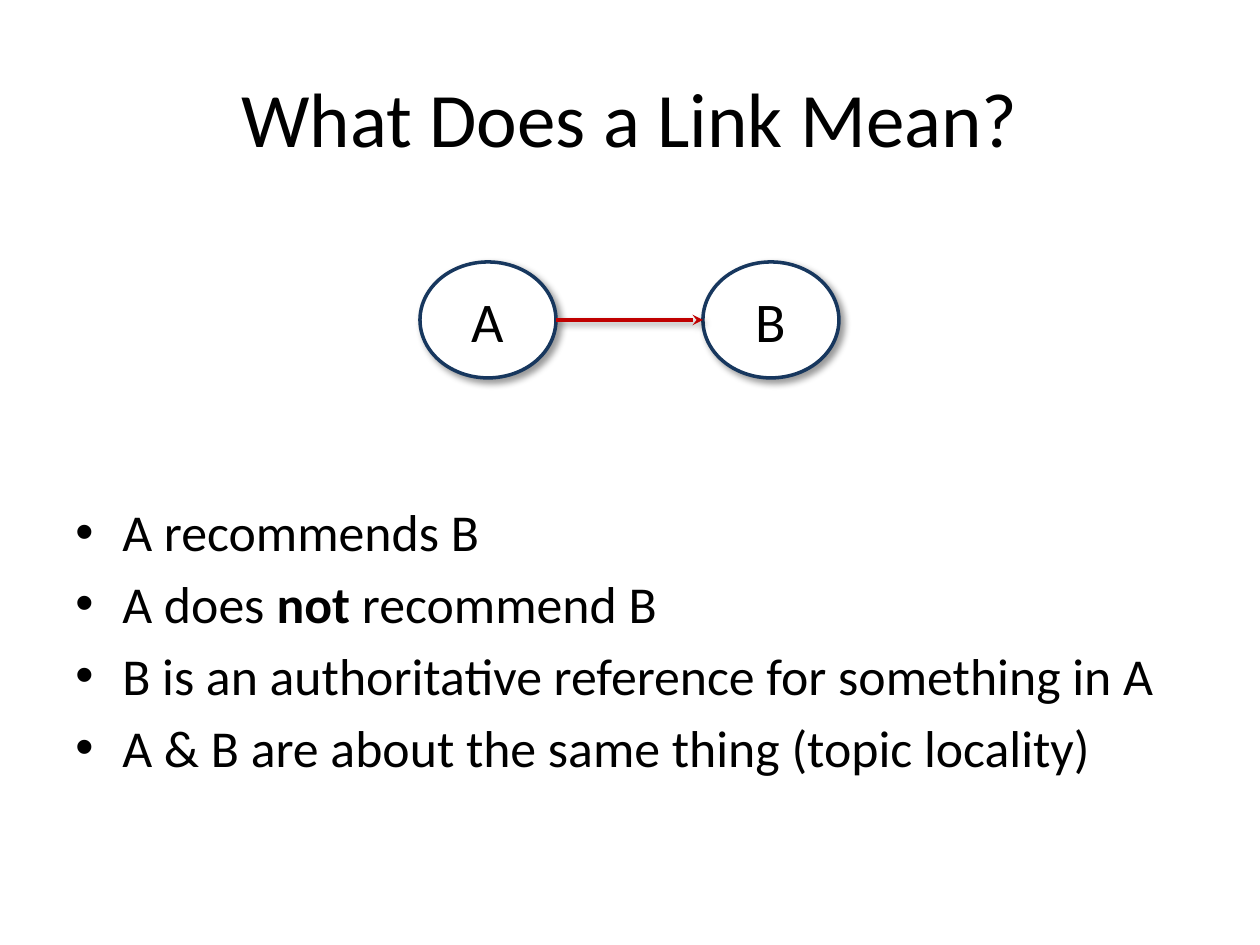
"""Build the slide on what a link from A to B means."""
import pptx
import pptx.dml.color
import pptx.enum.shapes
import pptx.enum.text
import pptx.oxml
import pptx.oxml.ns
import pptx.util

PX = 914400 // 126
BLACK = pptx.dml.color.RGBColor(0x00, 0x00, 0x00)
WHITE = pptx.dml.color.RGBColor(0xFF, 0xFF, 0xFF)
NAVY = pptx.dml.color.RGBColor(0x17, 0x37, 0x5E)
RED = pptx.dml.color.RGBColor(0xC0, 0x00, 0x00)
NS = pptx.oxml.ns.nsdecls("a")
SHADOW = (
    f'<a:effectLst {NS}><a:outerShdw blurRad="50800" dist="38100" dir="2700000" '
    'algn="tl" rotWithShape="0"><a:srgbClr val="000000"><a:alpha val="40000"/>'
    '</a:srgbClr></a:outerShdw></a:effectLst>'
)


def format_runs(p, size):
    for r in p.runs:
        r.font.name = "Calibri"
        r.font.size = pptx.util.Pt(size)
        r.font.color.rgb = BLACK


def outline_with_shadow(sp, color):
    sp.line.color.rgb = color
    sp.line.width = pptx.util.Pt(2)
    sp._element.spPr.append(pptx.oxml.parse_xml(SHADOW))


prs = pptx.Presentation()
prs.slide_width = pptx.util.Inches(10)
prs.slide_height = pptx.util.Inches(7.5)
s = prs.slides.add_slide(prs.slide_layouts[5])

title = s.shapes.title
title.left, title.top, title.width, title.height = 63 * PX, 38 * PX, 1134 * PX, 157 * PX
title.text_frame.text = "What Does a Link Mean?"
title.text_frame.vertical_anchor = pptx.enum.text.MSO_ANCHOR.MIDDLE
p = title.text_frame.paragraphs[0]
p.alignment = pptx.enum.text.PP_ALIGN.CENTER
format_runs(p, 44)

for name, x in (("A", 420), ("B", 703)):
    sp = s.shapes.add_shape(
        pptx.enum.shapes.MSO_SHAPE.OVAL, x * PX, 262 * PX, 136 * PX, 116 * PX)
    sp.fill.solid()
    sp.fill.fore_color.rgb = WHITE
    outline_with_shadow(sp, NAVY)
    tf = sp.text_frame
    tf.text = name
    tf.vertical_anchor = pptx.enum.text.MSO_ANCHOR.MIDDLE
    p = tf.paragraphs[0]
    p.alignment = pptx.enum.text.PP_ALIGN.CENTER
    format_runs(p, 32)

link = s.shapes.add_connector(
    pptx.enum.shapes.MSO_CONNECTOR.STRAIGHT, 556 * PX, 320 * PX, 703 * PX, 320 * PX)
outline_with_shadow(link, RED)
link.line._get_or_add_ln().append(
    pptx.oxml.parse_xml(f'<a:tailEnd {NS} type="stealth" w="med" len="med"/>'))

body = s.shapes.add_textbox(63 * PX, 494 * PX, 1134 * PX, 350 * PX)
tf = body.text_frame
tf.word_wrap = True
meanings = (
    ("A recommends B",),
    ("A does ", "not", " recommend B"),
    ("B is an authoritative reference for something in A",),
    ("A & B are about the same thing (topic locality)",),
)
for i, parts in enumerate(meanings):
    p = tf.add_paragraph() if i else tf.paragraphs[0]
    for part in parts:
        r = p.add_run()
        r.text = part
        r.font.bold = part == "not"
    format_runs(p, 29.6)
    p.space_before = pptx.util.Pt(5.5)
    pPr = p._p.get_or_add_pPr()
    pPr.set("marL", str(47 * PX))
    pPr.set("indent", str(-47 * PX))
    pPr.append(pptx.oxml.parse_xml(f'<a:buFont {NS} typeface="Arial"/>'))
    pPr.append(pptx.oxml.parse_xml(f'<a:buChar {NS} char="•"/>'))

prs.save("out.pptx")
